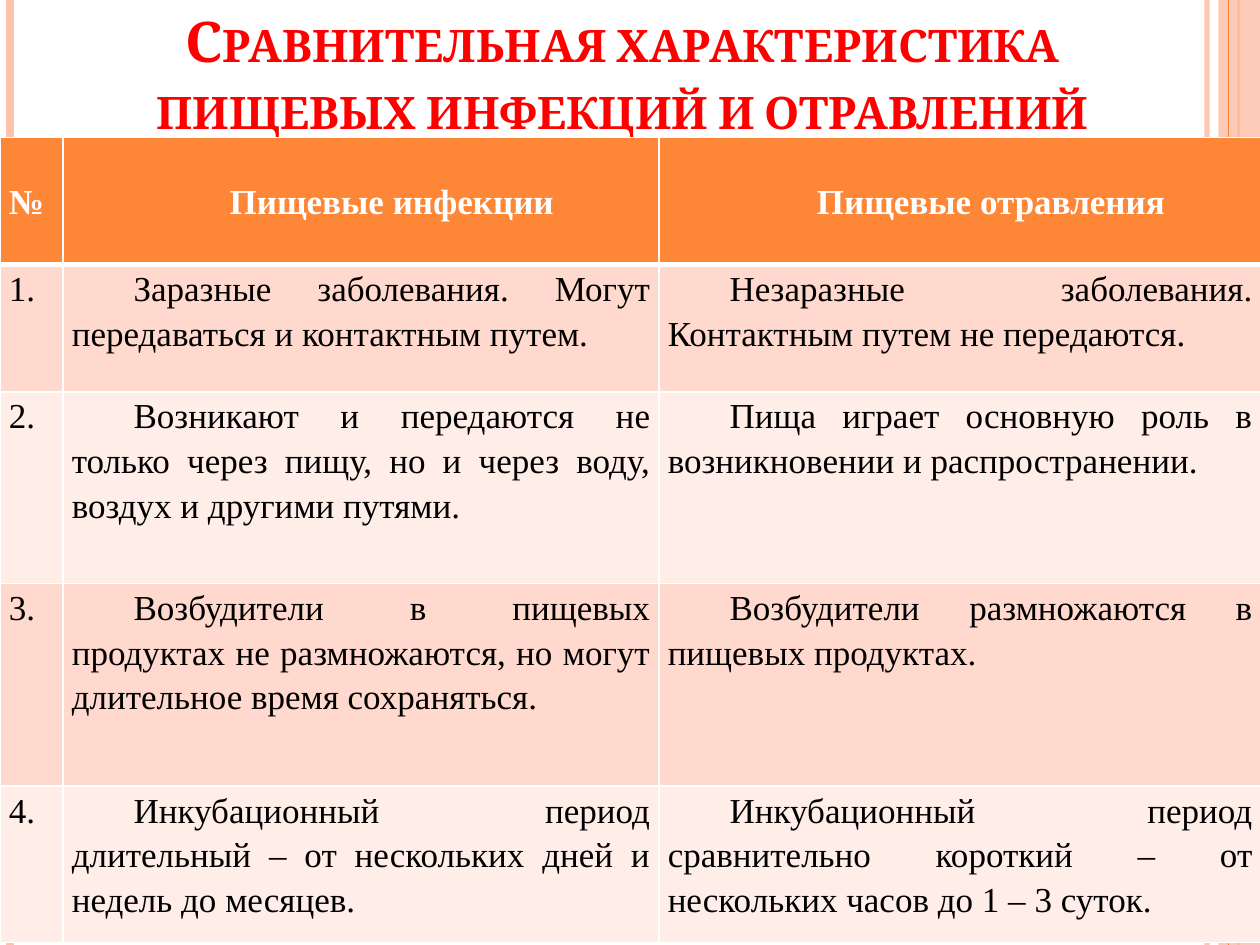
from dataclasses import dataclass

from lxml import etree
from pptx import Presentation
from pptx.dml.color import RGBColor
from pptx.enum.shapes import MSO_CONNECTOR, MSO_SHAPE
from pptx.enum.text import MSO_ANCHOR, PP_ALIGN
from pptx.oxml.ns import qn
from pptx.slide import Slide
from pptx.util import Inches, Pt

STRAIGHT = MSO_CONNECTOR.STRAIGHT
RECTANGLE = MSO_SHAPE.RECTANGLE
BOTTOM = MSO_ANCHOR.BOTTOM
LEFT, CENTER, JUSTIFY = PP_ALIGN.LEFT, PP_ALIGN.CENTER, PP_ALIGN.JUSTIFY

WHITE = RGBColor(0xFF, 0xFF, 0xFF)
BLACK = RGBColor(0, 0, 0)
RED = RGBColor(0xFF, 0, 0)
ORANGE = RGBColor(0xFE, 0x86, 0x37)
PEACH = RGBColor(0xFE, 0xC3, 0xAE)
DARK_BAND = RGBColor(0xFF, 0xD9, 0xCE)
LIGHT_BAND = RGBColor(0xFF, 0xED, 0xE8)

TITLE = "Сравнительная характеристика пищевых инфекций и отравлений"
COLUMN_WIDTHS = [0.5, 4.73, 4.78]
ROW_HEIGHTS = [1.01, 1.01, 1.52, 1.61, 1.24]
ROWS = [
    ("№", "Пищевые инфекции", "Пищевые отравления"),
    ("1.", "Заразные заболевания. Могут передаваться и контактным путем.",
     "Незаразные заболевания. Контактным путем не передаются."),
    ("2.", "Возникают и передаются не только через пищу, но и через воду, воздух и другими путями.",
     "Пища играет основную роль в возникновении и распространении."),
    ("3.", "Возбудители в пищевых продуктах не размножаются, но могут длительное время сохраняться.",
     "Возбудители размножаются в пищевых продуктах."),
    ("4.", "Инкубационный период длительный – от нескольких дней и недель до месяцев.",
     "Инкубационный период сравнительно короткий – от нескольких часов до 1 – 3 суток."),
]


def apply(target, values):
    for name, value in values.items():
        setattr(target, name, value)


def set_opacity(properties, percent):
    color = properties.find(".//" + qn("a:srgbClr"))
    etree.SubElement(color, qn("a:alpha"), val=str(percent * 1000))


@dataclass
class SlideBuilder:
    """Draws styled elements on the current slide."""

    slide: Slide
    title_font: str = "Cambria"
    table_font: str = "Times New Roman"

    def stripe(self, x, width, color, opacity=100):
        line = self.slide.shapes.add_connector(STRAIGHT, Inches(x), 0, Inches(x), Inches(7.5))
        line.line.color.rgb = color
        line.line.width = Pt(width)
        properties = line._element.spPr
        etree.SubElement(properties, qn("a:effectLst"))
        if opacity < 100:
            set_opacity(properties, opacity)

    def band(self, left, width, color, opacity):
        shape = self.slide.shapes.add_shape(RECTANGLE, Inches(left), 0, Inches(width), Inches(7.5))
        shape.shadow.inherit = False
        shape.fill.solid()
        shape.fill.fore_color.rgb = color
        shape.line.fill.background()
        set_opacity(shape._element.spPr, opacity)

    def title(self, text, left, top, width, height):
        box = self.slide.shapes.add_textbox(Inches(left), Inches(top), Inches(width), Inches(height))
        apply(box.text_frame, {"word_wrap": True, "vertical_anchor": BOTTOM})
        paragraph = box.text_frame.paragraphs[0]
        paragraph.alignment = CENTER
        run = paragraph.add_run()
        run.text = text
        apply(run.font, {"name": self.title_font, "size": Pt(32), "bold": True})
        run.font.color.rgb = RED
        run._r.get_or_add_rPr().set("cap", "small")

    def cell_borders(self, cell, widths):
        properties = cell._tc.get_or_add_tcPr()
        for index, (side, width) in enumerate(widths.items()):
            border = etree.Element(qn("a:" + side), w=str(Pt(width)))
            fill = etree.SubElement(border, qn("a:solidFill"))
            etree.SubElement(fill, qn("a:srgbClr"), val=str(WHITE))
            properties.insert(index, border)

    def cell(self, cell, text, row, column):
        header = row == 0
        apply(cell, {"margin_left": Inches(0.07), "margin_right": Inches(0.07),
                     "margin_top": Inches(0.32 if header else 0), "margin_bottom": 0})
        cell.fill.solid()
        cell.fill.fore_color.rgb = ORANGE if header else (LIGHT_BAND, DARK_BAND)[row % 2]
        paragraph = cell.text_frame.paragraphs[0]
        paragraph.line_spacing = 1.15
        paragraph.alignment = LEFT if column == 0 else CENTER if header else JUSTIFY
        if column:
            paragraph._p.get_or_add_pPr().set("indent", str(Inches(0.49)))
        run = paragraph.add_run()
        run.text = text
        apply(run.font, {"name": self.table_font, "size": Pt(20), "bold": header})
        run.font.color.rgb = WHITE if header else BLACK
        self.cell_borders(cell, {"lnL": 1, "lnR": 1, "lnT": 3 if row == 1 else 1,
                                 "lnB": 3 if header else 1})

    def table(self, rows, left, top, widths, heights):
        table = self.slide.shapes.add_table(
            len(rows), len(widths), Inches(left), Inches(top),
            Inches(sum(widths)), Inches(sum(heights))).table
        for column, width in zip(table.columns, widths):
            column.width = Inches(width)
        for row, height in zip(table.rows, heights):
            row.height = Inches(height)
        for row, texts in enumerate(rows):
            for column, text in enumerate(texts):
                self.cell(table.cell(row, column), text, row, column)


def main():
    presentation = Presentation()
    apply(presentation, {"slide_width": Inches(10), "slide_height": Inches(7.5)})
    builder = SlideBuilder(presentation.slides.add_slide(presentation.slide_layouts[6]))
    builder.stripe(9.58, 3, PEACH, 93)
    builder.stripe(0.08, 4.5, PEACH)
    builder.stripe(9.83, 1.5, ORANGE)
    builder.band(9.67, 0.33, PEACH, 87)
    builder.stripe(9.75, 0.75, ORANGE)
    builder.title(TITLE, 0.5, 0, 8.88, 1.17)
    builder.table(ROWS, 0, 1.09, COLUMN_WIDTHS, ROW_HEIGHTS)
    presentation.save("out.pptx")


if __name__ == "__main__":
    main()
